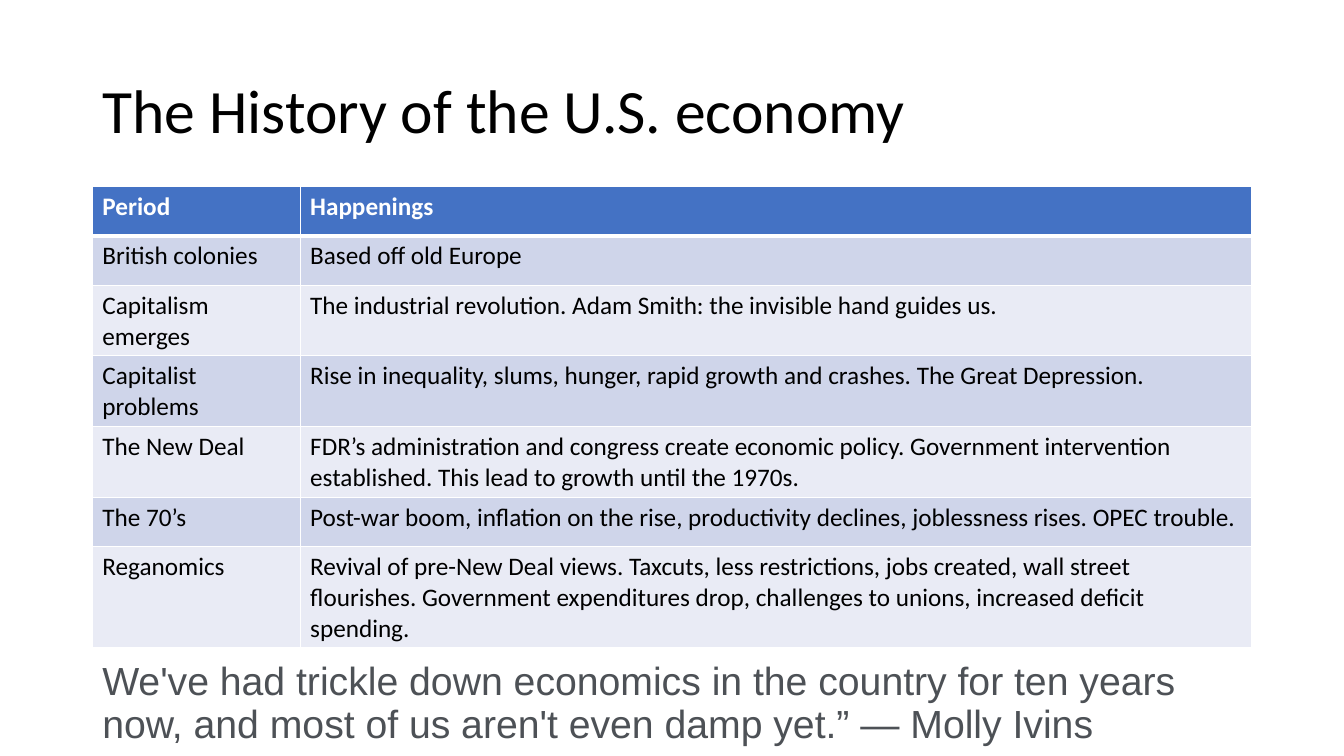
from lxml import etree
from pptx import Presentation
from pptx.dml.color import RGBColor
from pptx.enum.text import MSO_ANCHOR
from pptx.oxml.ns import qn
from pptx.util import Pt

MIDDLE, TOP = MSO_ANCHOR.MIDDLE, MSO_ANCHOR.TOP

# Content
TITLE = "The History of the U.S. economy"
QUOTE = ("We've had trickle down economics in the country for ten years now, "
         "and most of us aren't even damp yet.” — Molly Ivins")
HISTORY = [
    ("Period", "Happenings"),
    ("British colonies", "Based off old Europe"),
    ("Capitalism emerges",
     "The industrial revolution. Adam Smith: the invisible hand guides us."),
    ("Capitalist problems",
     "Rise in inequality, slums, hunger, rapid growth and crashes. "
     "The Great Depression."),
    ("The New Deal",
     "FDR’s administration and congress create economic policy. Government "
     "intervention established. This lead to growth until the 1970s."),
    ("The 70’s",
     "Post-war boom, inflation on the rise, productivity declines, "
     "joblessness rises. OPEC trouble."),
    ("Reganomics",
     "Revival of pre-New Deal views. Taxcuts, less restrictions, jobs created, "
     "wall street flourishes. Government expenditures drop, challenges to "
     "unions, increased deficit spending."),
]

# Layout and colours
LEFT, WIDTH = 66, 828
TABLE_TOP = 133.2
PERIOD_WIDTH = 148.4
ROW_HEIGHT, LAST_ROW_HEIGHT = 35.3, 45.4
THIN, THICK = 1, 3
BLACK, WHITE, GREY = "000000", "FFFFFF", "4D5156"
HEADER_FILL, BANDS = "4472C4", ("E9EBF5", "CFD5EA")


def color(hex_value):
    return RGBColor.from_string(hex_value)


def format_font(paragraph, hex_value, **values):
    for name, value in values.items():
        setattr(paragraph.font, name, value)
    paragraph.font.color.rgb = color(hex_value)


def add_text(slide, text, top, height, anchor, hex_value, **values):
    frame = slide.shapes.add_textbox(
        Pt(LEFT), Pt(top), Pt(WIDTH), Pt(height)).text_frame
    frame.word_wrap = True
    frame.vertical_anchor = anchor
    paragraph = frame.paragraphs[0]
    paragraph.text = text
    paragraph.line_spacing = 0.9
    format_font(paragraph, hex_value, **values)


def add_borders(cell, widths):
    properties = cell._tc.get_or_add_tcPr()
    for side, width in widths.items():
        line = etree.SubElement(properties, qn(f"a:ln{side}"), w=str(Pt(width)))
        fill = etree.SubElement(line, qn("a:solidFill"))
        etree.SubElement(fill, qn("a:srgbClr"), val=WHITE)


prs = Presentation()
prs.slide_width, prs.slide_height = Pt(960), Pt(540)
slide = prs.slides.add_slide(prs.slide_layouts[6])

# Title and quotation
add_text(slide, TITLE, 28.8, 104.4, MIDDLE, BLACK, name="Calibri", size=Pt(44))
add_text(slide, QUOTE, 469.4, 75.6, TOP, GREY, name="Arial", size=Pt(28))

# History table
heights = [ROW_HEIGHT] * (len(HISTORY) - 1) + [LAST_ROW_HEIGHT]
table = slide.shapes.add_table(
    len(HISTORY), 2, Pt(LEFT), Pt(TABLE_TOP), Pt(WIDTH), Pt(sum(heights))).table
for column, width in zip(table.columns, (PERIOD_WIDTH, WIDTH - PERIOD_WIDTH)):
    column.width = Pt(width)

for r, (entry, height) in enumerate(zip(HISTORY, heights)):
    table.rows[r].height = Pt(height)
    header = r == 0
    widths = {"L": THIN, "R": THIN,
              "T": THICK if r == 1 else THIN,
              "B": THICK if header else THIN}
    for c, text in enumerate(entry):
        cell = table.cell(r, c)
        add_borders(cell, widths)
        cell.fill.solid()
        cell.fill.fore_color.rgb = color(HEADER_FILL if header else BANDS[r % 2])
        cell.text = text
        format_font(cell.text_frame.paragraphs[0], WHITE if header else BLACK,
                    name="Calibri", size=Pt(18), bold=header)

prs.save("out.pptx")
